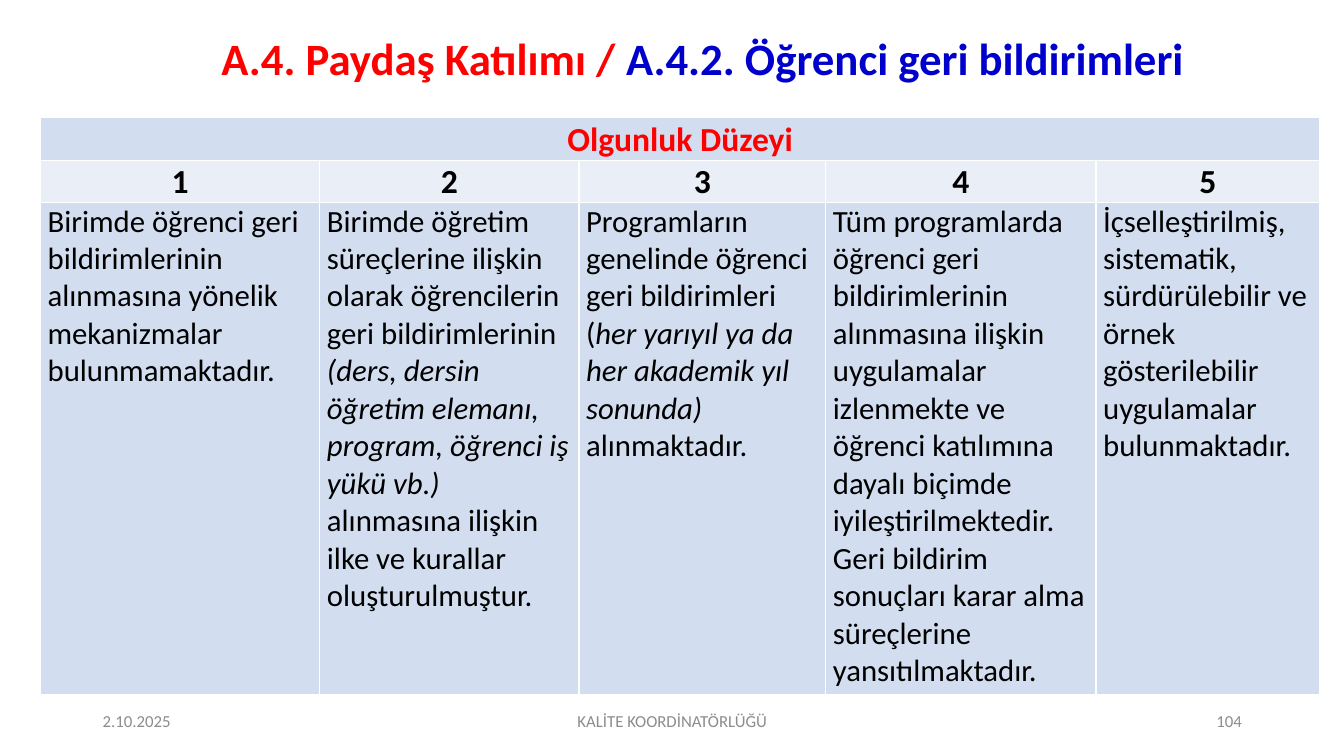
from lxml import etree
from pptx import Presentation
from pptx import util as u
from pptx.dml.color import RGBColor
from pptx.enum import text as t
from pptx.oxml import ns

RED = RGBColor(0xFF, 0x00, 0x00)
BLUE = RGBColor(0x00, 0x00, 0xCC)
BLACK = RGBColor(0x00, 0x00, 0x00)
GREY = RGBColor(0x8C, 0x8C, 0x8C)
BAND_DARK = RGBColor(0xD2, 0xDE, 0xEF)
BAND_LIGHT = RGBColor(0xEA, 0xEF, 0xF7)
BORDER = RGBColor(0xFF, 0xFF, 0xFF)
LEFT, CENTER, RIGHT = t.PP_ALIGN.LEFT, t.PP_ALIGN.CENTER, t.PP_ALIGN.RIGHT
MIDDLE, TOP, BOTTOM = t.MSO_ANCHOR.MIDDLE, t.MSO_ANCHOR.TOP, t.MSO_ANCHOR.BOTTOM

TITLE = [
    ("A.4. Paydaş Katılımı / ", {"color": RED}),
    ("A.4.2. Öğrenci geri bildirimleri", {"color": BLUE}),
]
HEADING = "Olgunluk Düzeyi"
ITALIC = {"italic": True}
LEVELS = [
    [("Birimde öğrenci geri bildirimlerinin alınmasına yönelik mekanizmalar "
      "bulunmamaktadır.", {})],
    [("Birimde öğretim süreçlerine ilişkin olarak öğrencilerin geri bildirimlerinin ", {}),
     ("(ders, dersin öğretim elemanı, program, öğrenci iş yükü vb.) ", ITALIC),
     ("alınmasına ilişkin ilke ve kurallar oluşturulmuştur.", {})],
    [("Programların genelinde öğrenci geri bildirimleri (", {}),
     ("her yarıyıl ya da her akademik yıl sonunda) ", ITALIC),
     ("alınmaktadır.", {})],
    [("Tüm programlarda öğrenci geri bildirimlerinin alınmasına ilişkin uygulamalar "
      "izlenmekte ve öğrenci katılımına dayalı biçimde iyileştirilmektedir. Geri bildirim "
      "sonuçları karar alma süreçlerine yansıtılmaktadır.", {})],
    [("İçselleştirilmiş, sistematik, sürdürülebilir ve örnek gösterilebilir uygulamalar "
      "bulunmaktadır.", {})],
]
FOOTER = [
    ("2.10.2025", 2.34, 7.62, LEFT),
    ("KALİTE KOORDİNATÖRLÜĞÜ", 11.23, 11.43, CENTER),
    ("104", 23.93, 7.62, RIGHT),
]
COLUMN_WIDTHS = [7.04, 6.53, 6.22, 6.81, 5.64]
ROW_HEIGHTS = [1.07, 1.07, 12.4]

TITLE_FONT = {"size": u.Pt(32), "bold": True}
HEADING_FONT = {"size": u.Pt(24), "bold": True, "color": RED}
NUMBER_FONT = {"size": u.Pt(24), "bold": True, "color": BLACK}
LEVEL_FONT = {"size": u.Pt(22), "bold": False, "color": BLACK}
FOOTER_FONT = {"size": u.Pt(12), "color": GREY}
CELL_MARGINS = {"margin_left": u.Cm(0.18), "margin_right": u.Cm(0.18),
                "margin_top": 0, "margin_bottom": 0}


def apply(target, values):
    """Set each named attribute on the target."""
    for name, value in values.items():
        setattr(target, name, value)


def write(frame, pieces, font, paragraph_format):
    """Fill the first paragraph of a frame with formatted runs."""
    paragraph = frame.paragraphs[0]
    apply(paragraph, paragraph_format)
    for wording, changes in pieces:
        run = paragraph.add_run()
        run.text = wording
        values = {"name": "Calibri", **font, **changes}
        run.font.color.rgb = values.pop("color")
        apply(run.font, values)


def style_cell(cell, fill, anchor):
    """Give a cell its margins, white borders and fill."""
    apply(cell, {**CELL_MARGINS, "vertical_anchor": anchor})
    properties = cell._tc.get_or_add_tcPr()
    for side in ("a:lnL", "a:lnR", "a:lnT", "a:lnB"):
        line = etree.SubElement(properties, ns.qn(side), w=str(u.Pt(1)))
        solid = etree.SubElement(line, ns.qn("a:solidFill"))
        etree.SubElement(solid, ns.qn("a:srgbClr"), val=str(BORDER))
    cell.fill.solid()
    cell.fill.fore_color.rgb = fill


def add_title(slide):
    """Place and write the two-colour title."""
    title = slide.shapes.title
    apply(title, {"left": u.Cm(2.26), "top": u.Cm(0.53),
                  "width": u.Cm(30.91), "height": u.Cm(2.01)})
    apply(title.text_frame, {"vertical_anchor": MIDDLE, "word_wrap": True})
    write(title.text_frame, TITLE, TITLE_FONT, {"alignment": CENTER, "line_spacing": 0.9})


def add_maturity_table(slide):
    """Build the table of five maturity levels."""
    table = slide.shapes.add_table(
        len(ROW_HEIGHTS), len(LEVELS), u.Cm(1.02), u.Cm(2.97),
        u.Cm(sum(COLUMN_WIDTHS)), u.Cm(sum(ROW_HEIGHTS))).table
    for column, width in zip(table.columns, COLUMN_WIDTHS):
        column.width = u.Cm(width)
    for row, height in zip(table.rows, ROW_HEIGHTS):
        row.height = u.Cm(height)
    heading = table.cell(0, 0)
    heading.merge(table.cell(0, len(LEVELS) - 1))
    write(heading.text_frame, [(HEADING, {})], HEADING_FONT, {"alignment": CENTER})
    for index, level in enumerate(LEVELS):
        number, description = table.cell(1, index), table.cell(2, index)
        style_cell(table.cell(0, index), BAND_DARK, BOTTOM)
        style_cell(number, BAND_LIGHT, BOTTOM)
        style_cell(description, BAND_DARK, TOP)
        write(number.text_frame, [(str(index + 1), {})], NUMBER_FONT,
              {"alignment": CENTER, "space_after": u.Pt(4)})
        write(description.text_frame, level, LEVEL_FONT,
              {"alignment": LEFT, "space_after": u.Pt(4)})


def add_footer(slide):
    """Write the date, the office and the page number."""
    for wording, left, width, alignment in FOOTER:
        frame = slide.shapes.add_textbox(
            u.Cm(left), u.Cm(17.65), u.Cm(width), u.Cm(1.02)).text_frame
        apply(frame, {"word_wrap": True, "vertical_anchor": MIDDLE})
        write(frame, [(wording, {})], FOOTER_FONT, {"alignment": alignment})


def main():
    """Build and save the slide."""
    deck = Presentation()
    apply(deck, {"slide_width": u.Cm(33.87), "slide_height": u.Cm(19.05)})
    slide = deck.slides.add_slide(deck.slide_layouts[5])
    add_title(slide)
    add_maturity_table(slide)
    add_footer(slide)
    deck.save("out.pptx")


if __name__ == "__main__":
    main()
